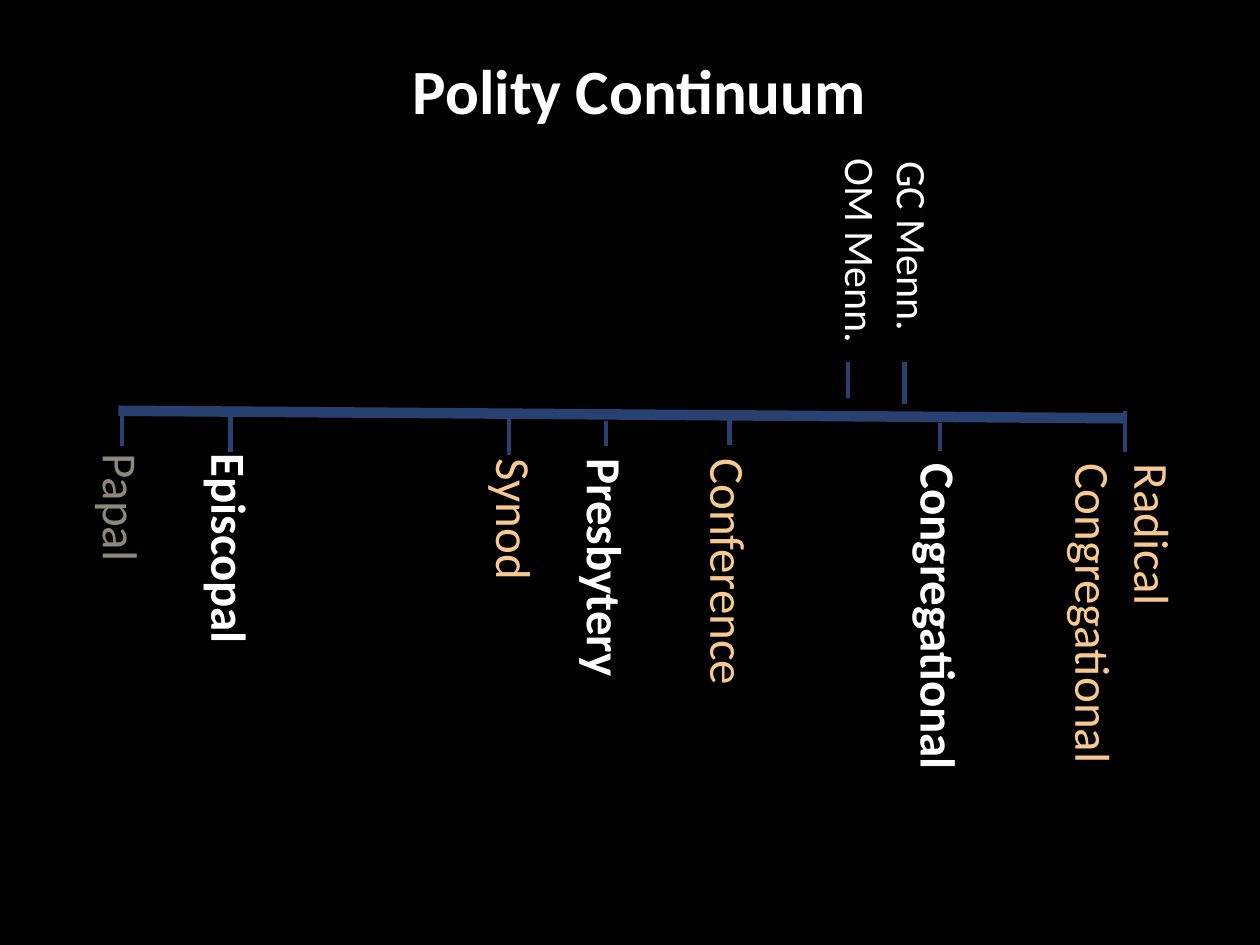
from dataclasses import dataclass

from pptx import Presentation
from pptx.dml.color import RGBColor
from pptx.enum.shapes import MSO_CONNECTOR
from pptx.enum.text import MSO_AUTO_SIZE, PP_ALIGN
from pptx.oxml.ns import qn
from pptx.util import Inches, Pt

BLACK = RGBColor(0x00, 0x00, 0x00)
WHITE = RGBColor(0xFF, 0xFF, 0xFF)
GRAY = RGBColor(0x8E, 0x88, 0x7C)
PEACH = RGBColor(0xF8, 0xC8, 0x91)
BLUE = RGBColor(0x29, 0x41, 0x71)


@dataclass
class Mark:
    """A tick and its label, in inches from the left end of the axis."""

    text: str
    tick_x: float
    tick_start: float
    tick_end: float
    label_x: float
    label_top: float
    label_length: float
    color: RGBColor = WHITE
    bold: bool = False
    size: int = 28
    label_height: float = 0.57


POLITIES = [
    Mark("Papal", 0.03, -0.01, 0.28, 0.03, 0.24, 1.95, GRAY),
    Mark("Episcopal", 0.89, 0.03, 0.33, 0.89, 0.24, 2.1, bold=True),
    Mark("Synod", 3.1, 0.03, 0.35, 3.15, 0.28, 1.42, PEACH),
    Mark("Presbytery", 3.87, 0.08, 0.28, 3.87, 0.28, 3.56, bold=True),
    Mark("Conference", 4.85, 0.06, 0.27, 4.85, 0.28, 2.29, PEACH),
    Mark("Congregational", 6.52, 0.1, 0.32, 6.52, 0.32, 3.09, bold=True),
    Mark("Radical Congregational", 7.99, 0, 0.33, 7.98, 0.32, 3.08, PEACH,
         label_height=1.04),
]
DENOMINATIONS = [
    Mark("OM Menn.", 5.79, -0.1, -0.39, 5.9, -2.1, 1.85, size=24, label_height=0.5),
    Mark("GC Menn.", 6.24, -0.05, -0.39, 6.31, -2.08, 1.84, size=24, label_height=0.5),
]


def add_text(slide, text, left, top, width, height, size, color, bold):
    """Add a wrapped text box and return it."""
    box = slide.shapes.add_textbox(Inches(left), Inches(top), Inches(width), Inches(height))
    frame = box.text_frame
    frame.word_wrap = True
    frame.auto_size = MSO_AUTO_SIZE.SHAPE_TO_FIT_TEXT
    frame.text = text
    font = frame.paragraphs[0].runs[0].font
    font.name = "Calibri"
    font.size = Pt(size)
    font.bold = bold
    font.color.rgb = color
    return box


def add_line(slide, start_x, start_y, end_x, end_y, weight):
    """Add a straight blue line without a shadow."""
    line = slide.shapes.add_connector(
        MSO_CONNECTOR.STRAIGHT,
        Inches(start_x), Inches(start_y), Inches(end_x), Inches(end_y))
    line.line.color.rgb = BLUE
    line.line.width = Pt(weight)
    properties = line._element.spPr
    properties.append(properties.makeelement(qn("a:effectLst"), {}))


def add_title(slide, left, top, width, height):
    """Add the centred slide title."""
    title = add_text(slide, "Polity Continuum", left, top, width, height, 36, WHITE, True)
    title.text_frame.paragraphs[0].alignment = PP_ALIGN.CENTER


def add_mark(slide, left, top, mark):
    """Add one tick with its label turned to read downwards."""
    tick_x = left + mark.tick_x
    add_line(slide, tick_x, top + mark.tick_start, tick_x, top + mark.tick_end, 2.5)
    label_left = left + mark.label_x - mark.label_length / 2
    label_top = top + mark.label_top + (mark.label_length - mark.label_height) / 2
    label = add_text(slide, mark.text, label_left, label_top, mark.label_length,
                     mark.label_height, mark.size, mark.color, mark.bold)
    label.rotation = 90


def add_continuum(slide, left, top, width, height):
    """Add the slightly sloping axis with all of its marks."""
    add_line(slide, left, top, left + width, top + height, 6)
    for mark in POLITIES + DENOMINATIONS:
        add_mark(slide, left, top, mark)


def main():
    """Build and save the presentation."""
    presentation = Presentation()
    presentation.slide_width = Inches(10)
    presentation.slide_height = Inches(7.5)
    slide = presentation.slides.add_slide(presentation.slide_layouts[6])
    slide.background.fill.solid()
    slide.background.fill.fore_color.rgb = BLACK
    add_continuum(slide, 0.94, 3.26, 7.99, 0.06)
    add_title(slide, 1.19, 0.36, 7.77, 0.71)
    presentation.save("out.pptx")


if __name__ == "__main__":
    main()
